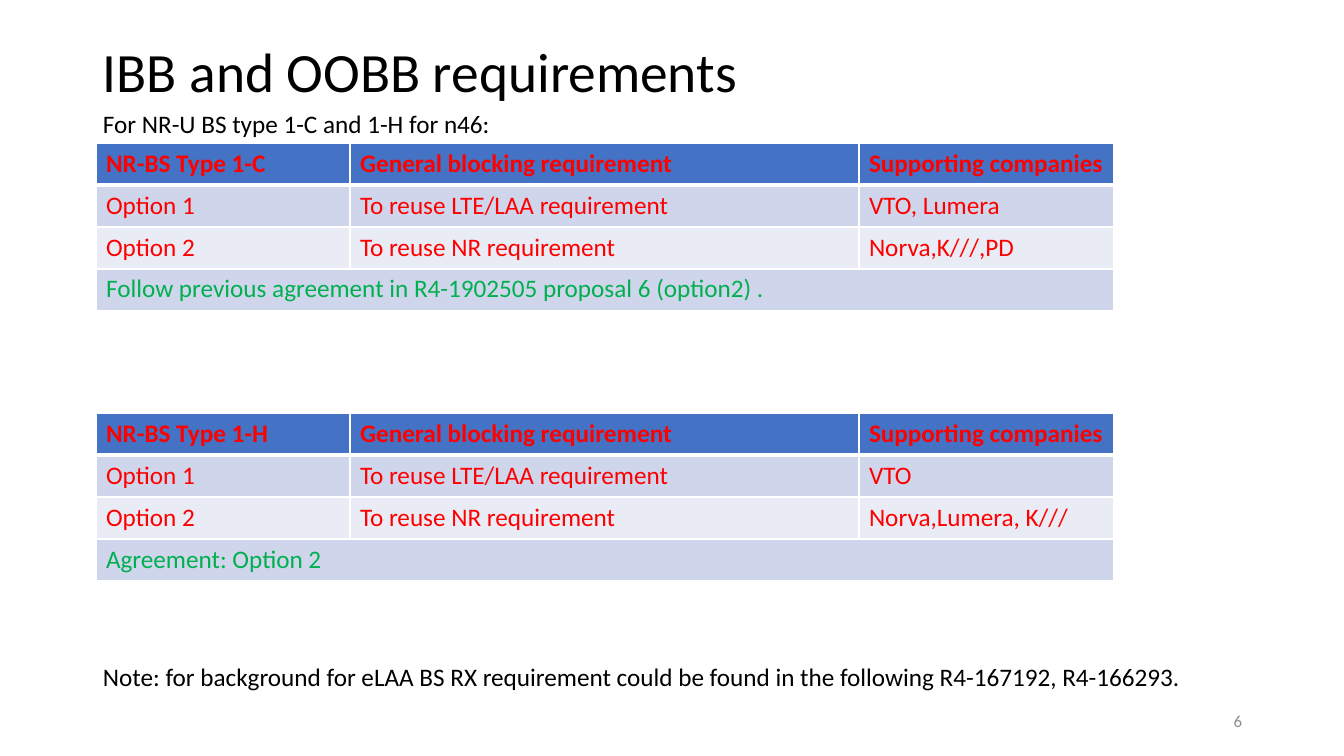
from dataclasses import dataclass

from lxml.etree import SubElement
from pptx import Presentation
from pptx.dml.color import RGBColor as RGB
from pptx.enum.text import MSO_ANCHOR as Anchor, PP_ALIGN as Align
from pptx.oxml.ns import qn
from pptx.util import Pt

SCALE = 914400 / 100.8


@dataclass(frozen=True)
class Theme:
    font: str = "Calibri"
    ink: str = "000000"
    grey: str = "8C8C8C"
    white: str = "FFFFFF"
    red: str = "FF0000"
    green: str = "00B050"
    head: str = "4472C4"
    bands: tuple = ("CFD5EA", "E9EBF5")
    title: float = 39.6
    body: float = 18
    small: float = 12


THEME = Theme()
COLS = (254, 509, 255)
ROW = 42


def px(*vals):
    return [round(v * SCALE) for v in vals]


def write(frame, text, size=THEME.body, color=THEME.ink, bold=False,
          align=Align.LEFT, lines=1.0):
    para = frame.paragraphs[0]
    para.alignment = align
    para.line_spacing = lines
    run = para.add_run()
    run.text = text
    font = run.font
    font.name, font.size, font.bold = THEME.font, Pt(size), bold
    font.color.rgb = RGB.from_string(color)


def label(slide, box, text, **form):
    frame = slide.shapes.add_textbox(*px(*box)).text_frame
    frame.word_wrap = True
    frame.vertical_anchor = Anchor.MIDDLE
    write(frame, text, **form)


def border(cell, top, bottom):
    """Draw white cell edges; top and bottom are widths in points."""
    props = cell._tc.get_or_add_tcPr()
    for side, width in zip("LRTB", (1, 1, top, bottom)):
        line = SubElement(props, qn(f"a:ln{side}"), w=str(Pt(width)))
        fill = SubElement(line, qn("a:solidFill"))
        SubElement(fill, qn("a:srgbClr"), val=THEME.white)


def paint(cell, row):
    border(cell, 3 if row == 1 else 1, 3 if row == 0 else 1)
    cell.fill.solid()
    color = THEME.bands[(row - 1) % 2] if row else THEME.head
    cell.fill.fore_color.rgb = RGB.from_string(color)


def options(slide, left, top, kind, backers, result):
    """Place a table of two options, closed by a merged result row."""
    rows = [
        (f"NR-BS Type {kind}", "General blocking requirement",
         "Supporting companies"),
        ("Option 1", "To reuse LTE/LAA requirement", backers[0]),
        ("Option 2", "To reuse NR requirement", backers[1]),
        (result,),
    ]
    size = px(left, top, sum(COLS), ROW * len(rows))
    table = slide.shapes.add_table(len(rows), len(COLS), *size).table
    table.horz_banding = False
    for col, width in zip(table.columns, px(*COLS)):
        col.width = width
    last = len(rows) - 1
    for r, texts in enumerate(rows):
        table.rows[r].height = px(ROW)[0]
        for c in range(len(COLS)):
            paint(table.cell(r, c), r)
        for c, text in enumerate(texts):
            write(table.cell(r, c).text_frame, text, bold=r == 0,
                  color=THEME.green if r == last else THEME.red)
    table.cell(last, 0).merge(table.cell(last, len(COLS) - 1))


def main():
    deck = Presentation()
    deck.slide_width, deck.slide_height = px(1344, 756)
    slide = deck.slides.add_slide(deck.slide_layouts[6])
    left, wide = 93, 1159
    label(slide, (left, 39, wide, 72), "IBB and OOBB requirements",
          size=THEME.title, lines=0.9)
    label(slide, (left, 111, wide, 24),
          "For NR-U BS type 1-C and 1-H for n46:")
    options(slide, 96, 143, "1-C", ("VTO, Lumera", "Norva,K///,PD"),
            "Follow previous agreement in R4-1902505 proposal 6 (option2) .")
    options(slide, 96, 413, "1-H", ("VTO", "Norva,Lumera, K///"),
            "Agreement: Option 2")
    label(slide, (left, 664, wide, 24),
          "Note: for background for eLAA BS RX requirement could be found "
          "in the following R4-167192, R4-166293.")
    label(slide, (950, 701, 302, 40), "6", size=THEME.small,
          color=THEME.grey, align=Align.RIGHT)
    deck.save("out.pptx")


if __name__ == "__main__":
    main()
